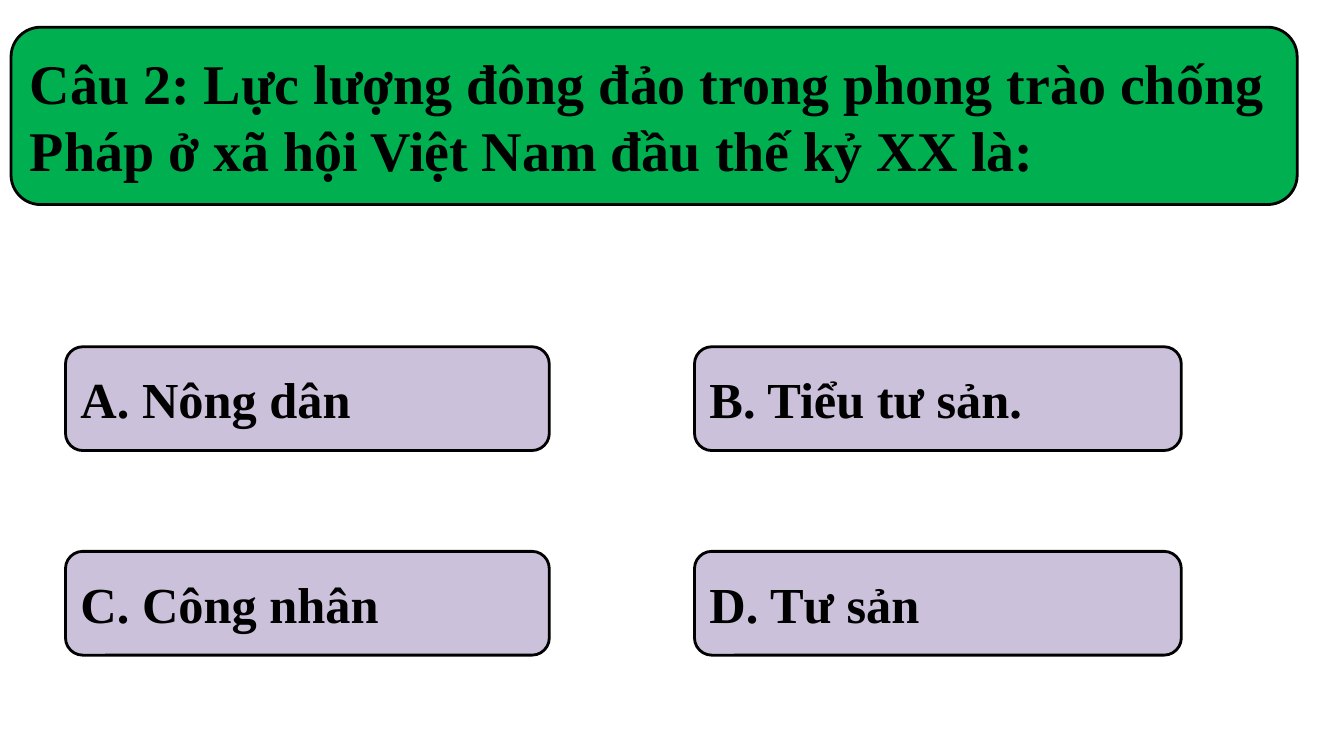
from dataclasses import dataclass

from pptx import Presentation
from pptx.dml.color import RGBColor
from pptx.enum.shapes import MSO_SHAPE
from pptx.enum.text import MSO_ANCHOR, MSO_AUTO_SIZE, PP_ALIGN
from pptx.util import Pt

ROUNDED = MSO_SHAPE.ROUNDED_RECTANGLE
MIDDLE = MSO_ANCHOR.MIDDLE
NO_AUTOFIT = MSO_AUTO_SIZE.NONE
LEFT, JUSTIFY = PP_ALIGN.LEFT, PP_ALIGN.JUSTIFY

COLORS = {"question": "00B050", "answer": "CCC1DA", "ink": "000000"}
FONT = "Times New Roman"
TITLE_ONLY = 5
QUESTION = "Câu 2: Lực lượng đông đảo trong phong trào chống Pháp ở xã hội Việt Nam đầu thế kỷ XX là:"
CORNER_INSET = 6.2


@dataclass(frozen=True)
class Card:
    left: float
    top: float
    width: float
    height: float
    fill: str


@dataclass(frozen=True)
class Answer:
    text: str
    column: int
    row: int
    align: PP_ALIGN = JUSTIFY


QUESTION_CARD = Card(7.92, 19.44, 918.72, 126.72, "question")
COLUMNS = ((46.8, 345.6), (496.08, 347.76))
FIRST_ROW, ROW_STEP, ANSWER_HEIGHT = 247.68, 146.16, 74.16
ANSWERS = (
    Answer("A. Nông dân", 0, 0),
    Answer("B. Tiểu tư sản.", 1, 0),
    Answer("C. Công nhân", 0, 1, LEFT),
    Answer("D. Tư sản", 1, 1),
)


def color(name: str) -> RGBColor:
    return RGBColor.from_string(COLORS[name])


def add_card(page, card: Card):
    box = page.shapes.add_shape(
        ROUNDED, Pt(card.left), Pt(card.top), Pt(card.width), Pt(card.height))
    box.shadow.inherit = False
    box.fill.solid()
    box.fill.fore_color.rgb = color(card.fill)
    box.line.color.rgb = color("ink")
    box.line.width = Pt(2)
    return box


def write(box, text: str, *, size: float, align: PP_ALIGN = LEFT) -> None:
    frame = box.text_frame
    frame.word_wrap = True
    frame.auto_size = NO_AUTOFIT
    frame.vertical_anchor = MIDDLE
    para = frame.paragraphs[0]
    para.alignment = align
    para.line_spacing = 1.0
    span = para.add_run()
    span.text = text
    span.font.name = FONT
    span.font.size = Pt(size)
    span.font.bold = True
    span.font.color.rgb = color("ink")


def add_question(page) -> None:
    """Lay the title placeholder over its card, inside the rounded corners."""
    card = QUESTION_CARD
    box = add_card(page, card)
    title = page.shapes.title
    title.left, title.top = Pt(card.left + CORNER_INSET), Pt(card.top)
    title.width, title.height = Pt(card.width - 2 * CORNER_INSET), Pt(card.height)
    title.element.addprevious(box.element)
    write(title, QUESTION, size=40)


def add_answer(page, answer: Answer) -> None:
    left, width = COLUMNS[answer.column]
    top = FIRST_ROW + answer.row * ROW_STEP
    box = add_card(page, Card(left, top, width, ANSWER_HEIGHT, "answer"))
    write(box, answer.text, size=36, align=answer.align)


def main() -> None:
    deck = Presentation()
    deck.slide_width, deck.slide_height = Pt(960), Pt(540)
    page = deck.slides.add_slide(deck.slide_layouts[TITLE_ONLY])
    add_question(page)
    for answer in ANSWERS:
        add_answer(page, answer)
    deck.save("out.pptx")


if __name__ == "__main__":
    main()
